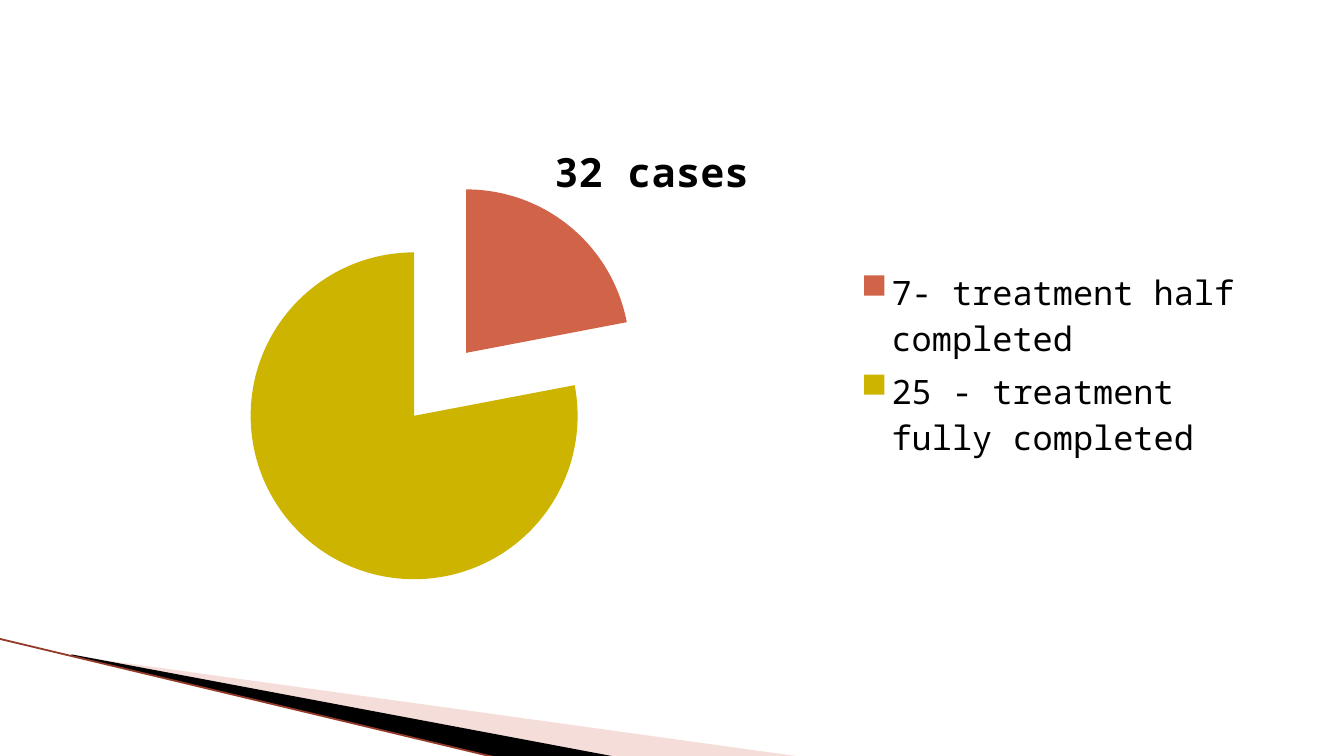
from dataclasses import dataclass

from lxml import etree
from pptx import Presentation
from pptx.chart.data import CategoryChartData
from pptx.dml.color import RGBColor
from pptx.enum.chart import XL_CHART_TYPE, XL_LEGEND_POSITION
from pptx.enum.shapes import MSO_CONNECTOR
from pptx.oxml import parse_xml
from pptx.oxml.ns import nsdecls, qn
from pptx.util import Cm, Pt

PIE = XL_CHART_TYPE.PIE
RIGHT = XL_LEGEND_POSITION.RIGHT
STRAIGHT = MSO_CONNECTOR.STRAIGHT
FONT = "Noto Sans Mono"
COLORS = {"pink": "E7ACA4", "black": "000000", "edge": "943A28",
          "half": "D16349", "full": "CCB400"}


@dataclass
class Band:
    points: list[tuple[float, float]]
    color: str
    alpha: int = 100


@dataclass
class Slice:
    label: str
    value: int
    color: str


BANDS = [
    Band([(1.4, 12.4), (15.11, 14.3), (11.58, 14.3)], "pink", 40),
    Band([(1.35, 12.37), (11.61, 14.3), (9.45, 14.33), (1.37, 12.4)], "black"),
]
SLICES = [
    Slice("7- treatment half completed", 22, "half"),
    Slice("25 - treatment fully completed", 78, "full"),
]


def rgb(name: str) -> RGBColor:
    return RGBColor.from_string(COLORS[name])


def draw_band(slide, band: Band) -> None:
    start, *rest = [(Cm(x), Cm(y)) for x, y in band.points]
    pen = slide.shapes.build_freeform(*start)
    pen.add_line_segments(rest, close=True)
    shape = pen.convert_to_shape()
    shape.shadow.inherit = False
    shape.line.fill.background()
    shape.fill.solid()
    shape.fill.fore_color.rgb = rgb(band.color)
    if band.alpha < 100:
        color = shape.fill._xPr.find(".//" + qn("a:srgbClr"))
        etree.SubElement(color, qn("a:alpha"), val=str(band.alpha * 1000))


def draw_edge(slide) -> None:
    edge = slide.shapes.add_connector(
        STRAIGHT, Cm(-0.03), Cm(12.07), Cm(9.42), Cm(14.33))
    edge.line.color.rgb = rgb("edge")
    edge.line.width = Pt(0.95)
    etree.SubElement(edge._element.spPr, qn("a:effectLst"))


def set_plot(chart, x: float, y: float, w: float, h: float) -> None:
    """Fix the inner plot area, in fractions of the chart."""
    area = chart._chartSpace.chart.plotArea
    for old in area.findall(qn("c:layout")):
        area.remove(old)
    sizes = "".join(f'<c:{tag} val="{val}"/>' for tag, val in
                    zip("xywh", (x, y, w, h)))
    area.insert(0, parse_xml(
        f'<c:layout {nsdecls("c")}><c:manualLayout>'
        '<c:layoutTarget val="inner"/><c:xMode val="edge"/>'
        f'<c:yMode val="edge"/>{sizes}</c:manualLayout></c:layout>'))


def draw_pie(slide, title: str, slices: list[Slice]) -> None:
    data = CategoryChartData()
    data.categories = [part.label for part in slices]
    data.add_series(title, [part.value for part in slices])
    chart = slide.shapes.add_chart(
        PIE, Cm(0.89), Cm(2.18), Cm(22.86), Cm(9.42), data).chart
    chart.font.name = FONT
    chart.font.size = Pt(18)
    chart.font.color.rgb = rgb("black")

    chart.has_title = True
    frame = chart.chart_title.text_frame
    frame.text = title
    font = frame.paragraphs[0].runs[0].font
    font.name, font.size, font.bold = FONT, Pt(21.6), True
    font.color.rgb = rgb("black")

    chart.has_legend = True
    chart.legend.position = RIGHT
    chart.legend.include_in_layout = False
    set_plot(chart, 0.1, 0.13, 0.45, 0.82)

    series = chart.plots[0].series[0]
    series._element.find(qn("c:tx")).addnext(
        parse_xml(f'<c:explosion {nsdecls("c")} val="25"/>'))
    for i, part in enumerate(slices):
        look = series.points[i].format
        look.fill.solid()
        look.fill.fore_color.rgb = rgb(part.color)
        look.line.fill.background()


def main() -> None:
    deck = Presentation()
    deck.slide_width, deck.slide_height = Cm(25.4), Cm(14.29)
    slide = deck.slides.add_slide(deck.slide_layouts[6])
    for band in BANDS:
        draw_band(slide, band)
    draw_edge(slide)
    draw_pie(slide, "32 cases", SLICES)
    deck.save("out.pptx")


if __name__ == "__main__":
    main()
